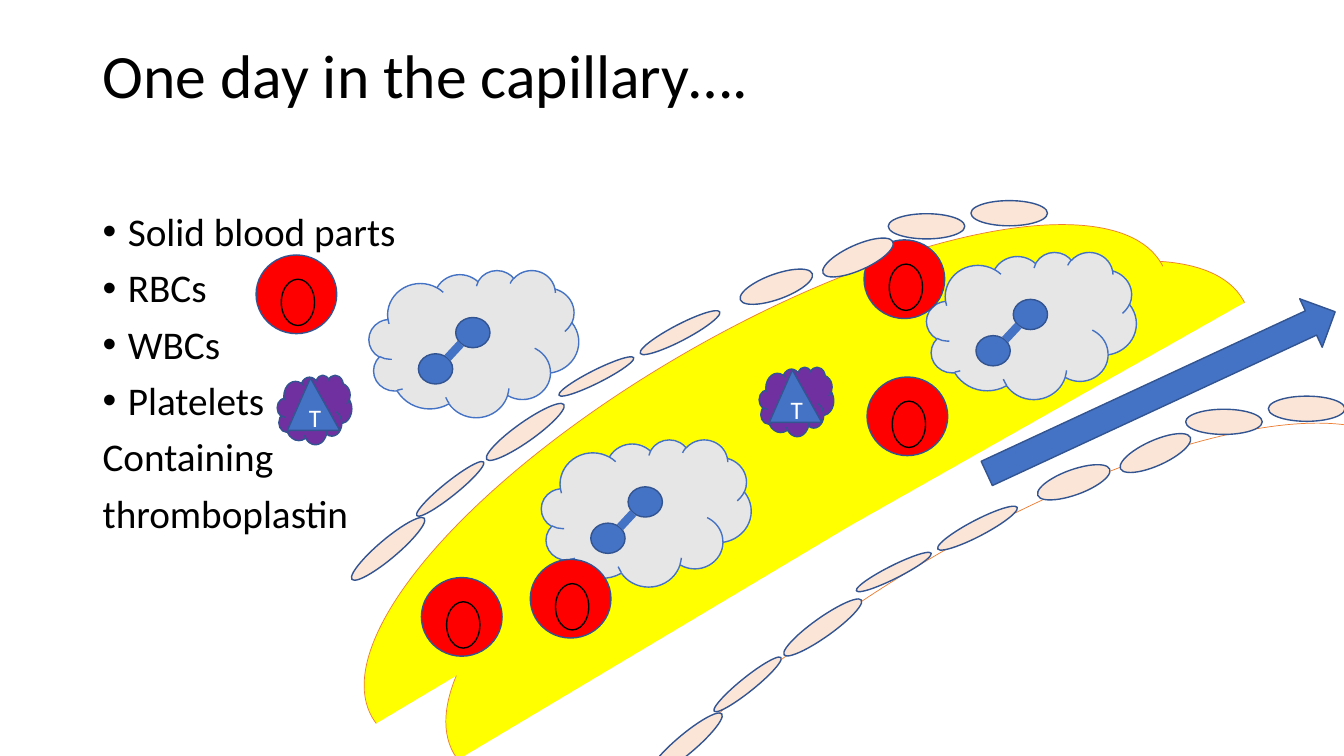
from dataclasses import dataclass

from lxml import etree
from pptx import Presentation
from pptx.dml.color import RGBColor
from pptx.enum.shapes import MSO_CONNECTOR, MSO_SHAPE
from pptx.enum.text import MSO_ANCHOR, PP_ALIGN
from pptx.oxml.ns import qn
from pptx.util import Inches, Pt

ARC, CLOUD, OVAL = MSO_SHAPE.ARC, MSO_SHAPE.CLOUD, MSO_SHAPE.OVAL
TRIANGLE, ARROW = MSO_SHAPE.ISOSCELES_TRIANGLE, MSO_SHAPE.RIGHT_ARROW
STRAIGHT = MSO_CONNECTOR.STRAIGHT
TOP, MIDDLE = MSO_ANCHOR.TOP, MSO_ANCHOR.MIDDLE
CENTER, LEFT = PP_ALIGN.CENTER, PP_ALIGN.LEFT


@dataclass(frozen=True)
class Theme:
    font: str = "Calibri"
    title_size: int = 44
    body_size: int = 28
    label_size: int = 18
    text: str = "000000"
    label: str = "FFFFFF"
    plasma: str = "FFFF00"
    vessel_edge: str = "ED7D31"
    red_cell: str = "FF0000"
    white_cell: str = "E7E6E6"
    accent: str = "4472C4"
    outline: str = "325491"
    platelet: str = "7030A0"
    wall: str = "FBE5D6"


THEME = Theme()
SLIDE_W, SLIDE_H = 13.33, 7.5
MARGIN, TEXT_W = 0.92, 11.5

TITLE = "One day in the capillary…."
BLOOD_PARTS = [
    ("Solid blood parts", True),
    ("RBCs", True),
    ("WBCs", True),
    ("Platelets", True),
    ("Containing", False),
    ("thromboplastin", False),
]

VESSEL_TILT = 330.1
VESSEL_ANGLES = (107.441, 0.233)
FRONT_PLASMA = (3.9, 3.64, 9.03, 3.17)
REAR_PLASMA = (3.09, 3.28, 9.03, 3.17)
LOWER_EDGE = (5.53, 5.3, 9.03, 2.99)
FLOW = (9.61, 3.63, 3.81, 0.53)
FLOW_TILT = 335.1

WALL_CELLS = [
    (9.63, 1.99, 0.76, 0.25, 0),
    (8.81, 2.12, 0.76, 0.25, 0),
    (4.04, 4.78, 0.85, 0.14, 321.2),
    (4.74, 4.19, 0.94, 0.19, 324.6),
    (5.5, 3.67, 0.83, 0.13, 333.3),
    (6.3, 3.22, 0.89, 0.16, 332.4),
    (7.32, 2.72, 0.76, 0.25, 340.1),
    (8.13, 2.43, 0.76, 0.25, 335.8),
    (3.38, 5.35, 0.94, 0.19, 319.8),
]
LOWER_WALL, UPPER_WALL = (2.95, 1.94), (0, 0)


def rgb(color):
    return RGBColor.from_string(color)


def draw(parent, preset, box, fill, line, weight=1, tilt=0, angles=()):
    part = parent.shapes.add_shape(preset, *map(Inches, box))
    part.shadow.inherit = False
    part.rotation = tilt
    for index, angle in enumerate(angles):
        part.adjustments[index] = angle
    if fill:
        part.fill.solid()
        part.fill.fore_color.rgb = rgb(fill)
    else:
        part.fill.background()
    part.line.color.rgb = rgb(line)
    part.line.width = Pt(weight)
    return part


def style(paragraph, size, color, align=LEFT):
    paragraph.alignment = align
    for run in paragraph.runs:
        run.font.name = THEME.font
        run.font.size = Pt(size)
        run.font.color.rgb = rgb(color)


def text_area(slide, box):
    frame = slide.shapes.add_textbox(*map(Inches, box)).text_frame
    frame.word_wrap = True
    frame.vertical_anchor = TOP
    return frame


def add_bullet(paragraph):
    properties = paragraph._p.get_or_add_pPr()
    properties.set("marL", str(Inches(0.25)))
    properties.set("indent", str(-Inches(0.25)))
    etree.SubElement(properties, qn("a:buFont")).set("typeface", "Arial")
    etree.SubElement(properties, qn("a:buChar")).set("char", "•")


def vessel_arc(parent, box, fill):
    draw(parent, ARC, box, fill, THEME.vessel_edge, 0.5, VESSEL_TILT, VESSEL_ANGLES)


def vessel_back(slide):
    group = slide.shapes.add_group_shape()
    vessel_arc(group, LOWER_EDGE, None)
    vessel_arc(group, REAR_PLASMA, THEME.plasma)


def red_cell(slide, x, y):
    group = slide.shapes.add_group_shape()
    draw(group, OVAL, (x, y, 0.8, 0.78), THEME.red_cell, THEME.outline)
    draw(group, OVAL, (x + 0.25, y + 0.24, 0.33, 0.46), THEME.red_cell, THEME.text)


def white_cell(slide, x, y):
    group = slide.shapes.add_group_shape()
    draw(group, CLOUD, (x, y, 2.08, 1.46), THEME.white_cell, THEME.accent)
    for dx, dy in ((0.49, 0.83), (0.86, 0.47)):
        draw(group, OVAL, (x + dx, y + dy, 0.34, 0.3), THEME.accent, THEME.outline)
    ends = (x + 0.78, y + 0.87, x + 0.91, y + 0.73)
    bridge = group.shapes.add_connector(STRAIGHT, *map(Inches, ends))
    bridge.line.color.rgb = rgb(THEME.accent)
    bridge.line.width = Pt(6)
    etree.SubElement(bridge._element.spPr, qn("a:effectLst"))


def platelet(slide, x, y):
    group = slide.shapes.add_group_shape()
    draw(group, CLOUD, (x, y, 0.74, 0.69), THEME.platelet, THEME.outline)
    marker = draw(group, TRIANGLE, (x + 0.1, y + 0.03, 0.52, 0.52),
                  THEME.accent, THEME.outline, angles=(0.44,))
    frame = marker.text_frame
    frame.text = "T"
    frame.vertical_anchor = MIDDLE
    style(frame.paragraphs[0], THEME.label_size, THEME.label, CENTER)


def vessel_wall(slide, shift):
    group = slide.shapes.add_group_shape()
    for x, y, width, height, tilt in WALL_CELLS:
        box = (x + shift[0], y + shift[1], width, height)
        draw(group, OVAL, box, THEME.wall, THEME.outline, tilt=tilt)


CELLS = [
    (white_cell, 9.19, 2.5),
    (red_cell, 4.18, 5.73),
    (platelet, 7.53, 3.64),
    (platelet, 2.75, 3.72),
    (white_cell, 5.37, 4.36),
    (red_cell, 8.57, 2.38),
    (red_cell, 8.6, 3.74),
    (red_cell, 5.26, 5.55),
]


def main():
    deck = Presentation()
    deck.slide_width, deck.slide_height = Inches(SLIDE_W), Inches(SLIDE_H)
    slide = deck.slides.add_slide(deck.slide_layouts[6])

    heading = text_area(slide, (MARGIN, 0.4, TEXT_W, 1.45))
    heading.text = TITLE
    heading.paragraphs[0].line_spacing = 0.9
    style(heading.paragraphs[0], THEME.title_size, THEME.text)

    body = text_area(slide, (MARGIN, 2.06, TEXT_W, 4.76))
    body.text = "\n".join(words for words, _ in BLOOD_PARTS)
    for paragraph, (_, bulleted) in zip(body.paragraphs, BLOOD_PARTS):
        paragraph.line_spacing = 0.9
        paragraph.space_before = Pt(10)
        style(paragraph, THEME.body_size, THEME.text)
        if bulleted:
            add_bullet(paragraph)

    vessel_arc(slide, FRONT_PLASMA, THEME.plasma)
    red_cell(slide, 2.54, 2.53)
    white_cell(slide, 3.66, 2.68)
    vessel_back(slide)
    for cell, x, y in CELLS:
        cell(slide, x, y)
    draw(slide, ARROW, FLOW, THEME.accent, THEME.outline, tilt=FLOW_TILT)
    for shift in (LOWER_WALL, UPPER_WALL):
        vessel_wall(slide, shift)

    deck.save("out.pptx")


if __name__ == "__main__":
    main()
